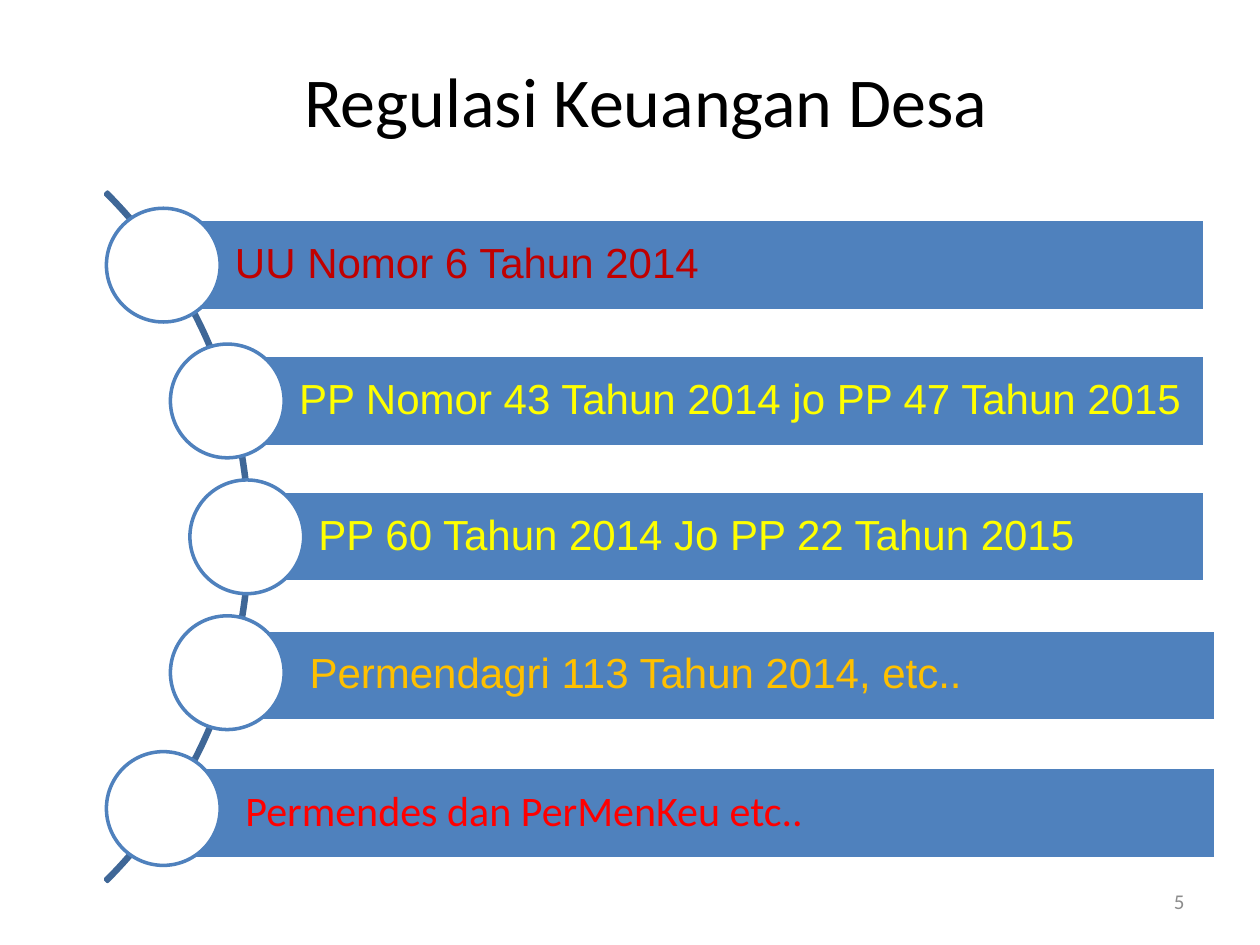
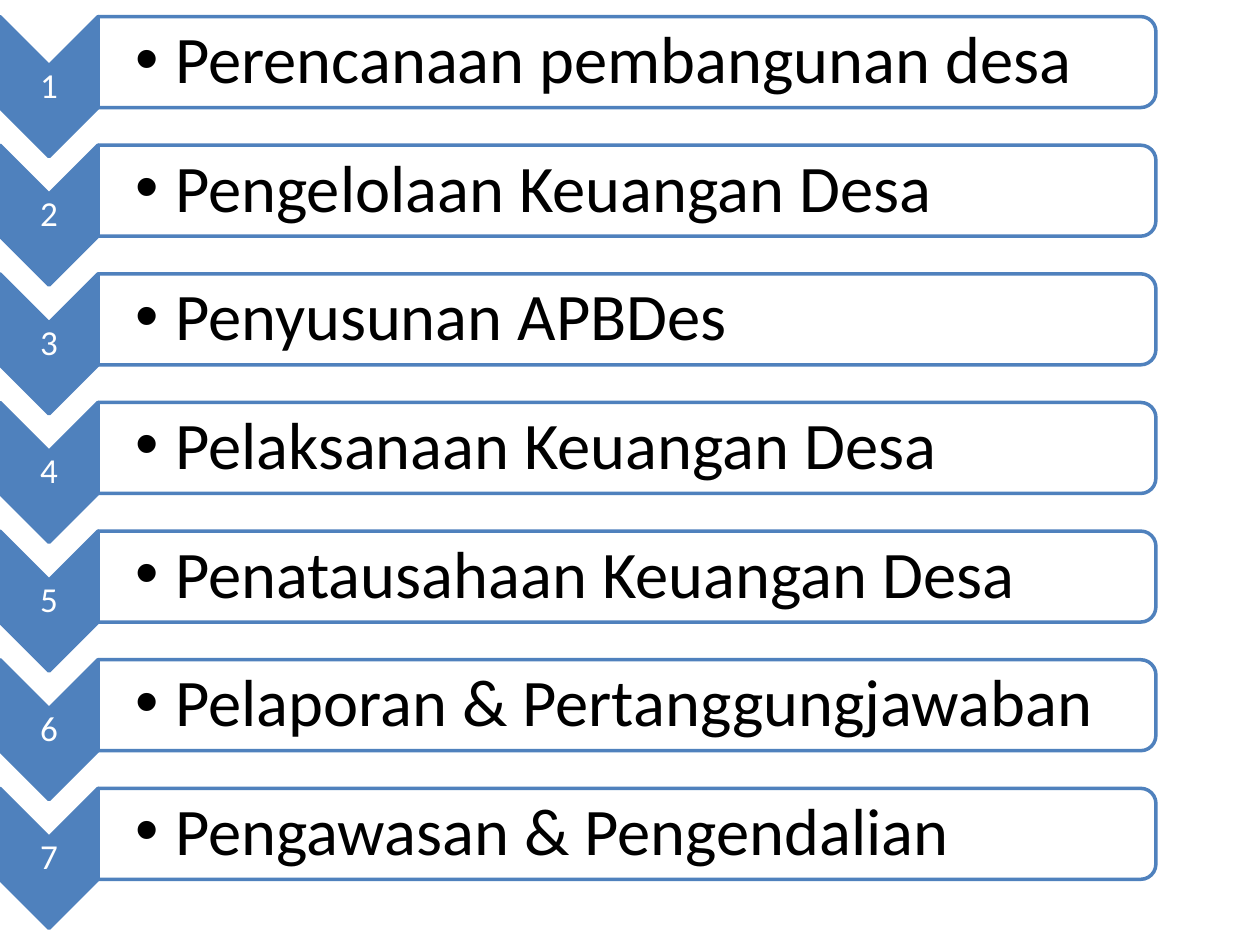
from dataclasses import dataclass
from math import sqrt

from lxml import etree
from pptx import Presentation
from pptx.dml.color import RGBColor
from pptx.enum import shapes, text
from pptx.oxml import ns
from pptx.util import Pt

MSO = shapes.MSO_SHAPE
ALIGN = text.PP_ALIGN


@dataclass(frozen=True)
class Theme:
    blue: str = "4F81BD"
    arc: str = "3F6797"
    white: str = "FFFFFF"
    black: str = "000000"
    grey: str = "8C8C8C"
    crimson: str = "C00000"
    yellow: str = "FFFF00"
    gold: str = "FFC000"
    red: str = "FF0000"
    font: str = "Calibri"
    alt: str = "Arial"
    title: int = 40
    step: int = 38
    rule: int = 24
    count: int = 20
    page: int = 12
    line: int = 2


T = Theme()

RULES = [  # wording, colour, font, shift of the bar
    ("UU Nomor 6 Tahun 2014", T.crimson, T.alt, (0, 0)),
    ("PP Nomor 43 Tahun 2014 jo PP 47 Tahun 2015", T.yellow, T.alt, (0, 0)),
    ("PP 60 Tahun 2014 Jo PP 22 Tahun 2015", T.yellow, T.alt, (0, 0)),
    ("Permendagri 113 Tahun 2014, etc..", T.gold, T.alt, (6, 1.5)),
    ("Permendes dan PerMenKeu etc..", T.red, T.font, (6, 2.5)),
]
STEPS = [
    "Perencanaan pembangunan desa",
    "Pengelolaan Keuangan Desa",
    "Penyusunan APBDes",
    "Pelaksanaan Keuangan Desa",
    "Penatausahaan Keuangan Desa",
    "Pelaporan & Pertanggungjawaban",
    "Pengawasan & Pengendalian",
]


def pts(*nums):
    return [Pt(n) for n in nums]


def draw(slide, kind, box, fill, line):
    """Add a preset shape; a fill of None leaves it open."""
    item = slide.shapes.add_shape(kind, *pts(*box))
    item.shadow.inherit = False
    if fill:
        item.fill.solid()
        item.fill.fore_color.rgb = RGBColor.from_string(fill)
    else:
        item.fill.background()
    item.line.color.rgb = RGBColor.from_string(line)
    item.line.width = Pt(T.line)
    return item


def turn(slide, kind, box, fill):
    """Add a shape turned by 90 degrees that covers the given box."""
    x, y, w, h = box
    flat = (x + (w - h) / 2, y + (h - w) / 2, h, w)
    item = draw(slide, kind, flat, fill, T.blue)
    item.rotation = 90
    return item


def write(item, words, size, color, font=T.font, align=ALIGN.LEFT,
          inset=(7.2, 3.6, 7.2, 3.6), space=0.9):
    frame = item.text_frame
    frame.word_wrap = True
    frame.auto_size = text.MSO_AUTO_SIZE.NONE
    frame.vertical_anchor = text.MSO_ANCHOR.MIDDLE
    (frame.margin_left, frame.margin_top,
     frame.margin_right, frame.margin_bottom) = pts(*inset)
    para = frame.paragraphs[0]
    para.alignment = align
    para.line_spacing = space
    run = para.add_run()
    run.text = words
    run.font.name = font
    run.font.size = Pt(size)
    run.font.color.rgb = RGBColor.from_string(color)
    return para


def label(slide, box, *args, **opts):
    return write(slide.shapes.add_textbox(*pts(*box)), *args, **opts)


def bullet(para, indent):
    props = para._p.get_or_add_pPr()
    props.set("marL", str(Pt(indent)))
    props.set("indent", str(-Pt(indent)))
    etree.SubElement(props, ns.qn("a:buFont")).set("typeface", T.alt)
    etree.SubElement(props, ns.qn("a:buChar")).set("char", "•")


def fade(item, share):
    color = item.fill._xPr.find(".//" + ns.qn("a:srgbClr"))
    etree.SubElement(color, ns.qn("a:alpha")).set("val", str(share * 1000))


def head(slide, box, words):
    title = slide.shapes.title
    title.left, title.top, title.width, title.height = pts(*box)
    write(title, words, T.title, T.black, align=ALIGN.CENTER, space=1)


def curve(slide, box):
    """Bars whose dots sit on an arc bulging to the right."""
    x, y, w, h = box
    radius, dot, bar = 276.5, 65, 52
    mid = y + h / 2
    hub = x - 196  # centre of the circle that carries the dots
    gap = h / 6.37

    # Arc behind the dots
    ring = radius + 2
    arc = draw(slide, MSO.BLOCK_ARC,
               (hub - ring, mid - ring, 2 * ring, 2 * ring), None, T.arc)
    for i, value in enumerate((189, 27, 0.003)):
        arc.adjustments[i] = value

    # Bars and dots
    for i, (words, color, font, (dx, dy)) in enumerate(RULES):
        rise = (i - (len(RULES) - 1) / 2) * gap
        cx, cy = hub + sqrt(radius ** 2 - rise ** 2), mid + rise
        strip = draw(slide, MSO.RECTANGLE,
                     (cx + dx, cy - bar / 2 + dy, x + w - cx, bar),
                     T.blue, T.white)
        write(strip, words, T.rule, color, font, inset=(41, 5, 5, 5))
        draw(slide, MSO.OVAL, (cx - dot / 2, cy - dot / 2, dot, dot),
             T.white, T.blue)


def ladder(slide, box):
    """Numbered chevrons, each with a rounded panel at its right."""
    x, y, w, h = box
    wide, tall, panel = 56, 80, 52
    gap = (h - tall) / (len(STEPS) - 1)
    for i, words in enumerate(STEPS):
        top = y + i * gap
        # Number
        turn(slide, MSO.CHEVRON, (x, top, wide, tall), T.blue)
        label(slide, (x, top + 28, wide, 24), str(i + 1), T.count, T.white,
              align=ALIGN.CENTER, inset=(1, 1, 1, 1))
        # Panel
        card = turn(slide, MSO.ROUND_2_SAME_RECTANGLE,
                    (x + wide, top, w - wide, panel), T.white)
        fade(card, 90)
        para = label(slide, (x + wide, top + 2.5, w - wide - 3, panel - 5),
                     words, T.step, T.black, inset=(21.6, 2, 2, 2))
        bullet(para, 22.5)


def main():
    deck = Presentation()
    deck.slide_width, deck.slide_height = pts(720, 540)

    # Regulations
    slide = deck.slides.add_slide(deck.slide_layouts[5])
    head(slide, (48, 18, 642, 78), "Regulasi Keuangan Desa")
    label(slide, (516, 500.5, 168, 28.75), "5", T.page, T.grey,
          align=ALIGN.RIGHT, space=1)
    curve(slide, (60.5, 59.5, 628, 494.5))

    # Steps
    slide = deck.slides.add_slide(deck.slide_layouts[6])
    ladder(slide, (0, 9.5, 660.5, 521))

    deck.save("out.pptx")


if __name__ == "__main__":
    main()
